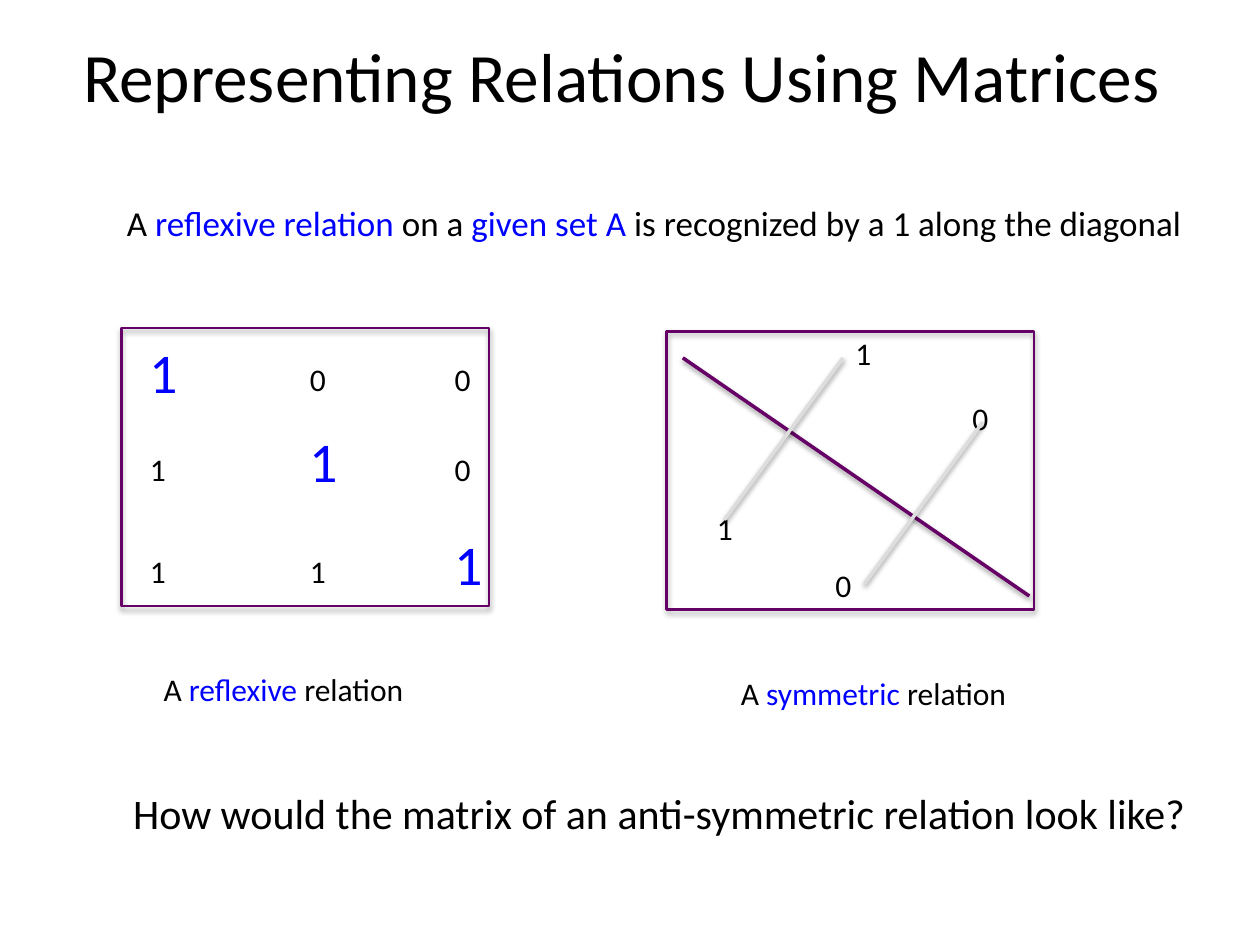
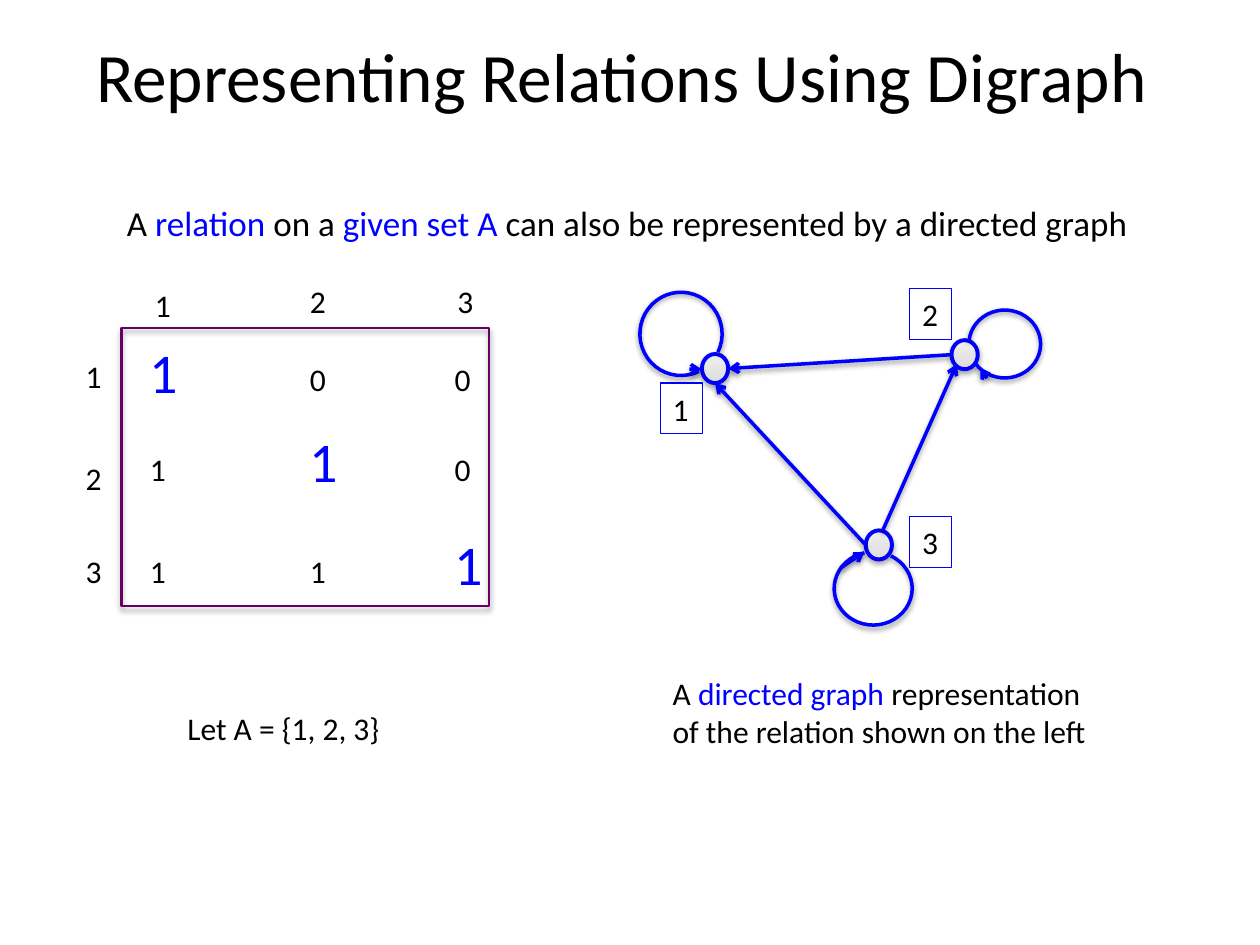
import math
from dataclasses import dataclass

from lxml import etree
from pptx import Presentation
from pptx import util as u
from pptx.dml.color import RGBColor
from pptx.enum import shapes, text
from pptx.oxml import ns

Pt = u.Pt


@dataclass(frozen=True)
class Theme:
    font: str = "Calibri"
    ink: str = "000000"
    accent: str = "0000FF"
    frame: str = "660066"
    mirror: str = "DDDDDD"
    node_light: str = "EFEFEF"
    title: float = 39.6
    question: float = 24
    lead: float = 20
    body: float = 18
    diagonal: float = 32


@dataclass(frozen=True)
class Node:
    """A graph node: its centre and the offset from there to its label box."""
    x: float
    y: float
    label_dx: float
    label_dy: float

    def site(self, direction):
        """Point on the rim, with direction in units of the half axes."""
        dx, dy = direction
        return self.x + dx * NODE_W / 2, self.y + dy * NODE_H / 2


@dataclass(frozen=True)
class Loop:
    """An elliptic arc, drawn clockwise, with a short arrow into its node."""
    center: tuple
    radii: tuple
    first_angle: float
    last_angle: float
    arrow: tuple

    def points(self, steps=40):
        (cx, cy), (rx, ry) = self.center, self.radii
        sweep = self.last_angle - self.first_angle
        angles = [math.radians(self.first_angle + sweep * i / steps) for i in range(steps + 1)]
        return [(cx + rx * math.cos(a), cy + ry * math.sin(a)) for a in angles]


THEME = Theme()
DIGIT_W, DIGIT_H = 24, 29
FRAME_W, FRAME_H = 210, 159
NODE_W, NODE_H = 15, 16.6

# The relation as a matrix: a 1 in row i and column j means that i is related to j.
MATRIX = ("100", "110", "111")
COLUMNS = (78.5, 170, 252.7)
ROWS = (202.3, 253.4, 311.8)
DIAGONAL_LIFT = 13

# The same relation as a digraph.
LEFT, RIGHT, BOTTOM = (-1, 0), (1, 0), (0, 1)
BOTTOM_LEFT, TOP_RIGHT = (-0.6, 0.65), (0.3, -1)
NODES = {
    1: Node(408.6, 210.6, -31.3, 8.3),
    2: Node(551.2, 202.7, -31.3, -37.8),
    3: Node(502.2, 311.4, 17.6, -16.2),
}
EDGE_SITES = {(2, 1): (LEFT, RIGHT), (3, 1): (LEFT, BOTTOM), (3, 2): (TOP_RIGHT, BOTTOM_LEFT)}
LOOPS = {
    1: Loop((389.2, 190.8), (23.5, 23.8), 64, 386, ((399, 211), (401, 211))),
    2: Loop((574.2, 196.6), (20.5, 19.4), 186, 504, ((561.6, 212.4), (560.2, 210.2))),
    3: Loop((499, 336.3), (22.3, 20.9), -63, 257, ((480.2, 324.7), (494, 315.4))),
}


def rgb(color):
    return RGBColor.from_string(color)


def write(tf, lines, size=THEME.body, align=text.PP_ALIGN.LEFT, wrap=False):
    """Fill a frame line by line; *starred* pieces take the accent colour."""
    tf.word_wrap = wrap
    for i, line in enumerate(lines.split("\n")):
        p = tf.paragraphs[0] if i == 0 else tf.add_paragraph()
        p.alignment = align
        for j, piece in enumerate(line.split("*")):
            if piece:
                r = p.add_run()
                r.text = piece
                r.font.name = THEME.font
                r.font.size = Pt(size)
                r.font.color.rgb = rgb(THEME.accent if j % 2 else THEME.ink)


def add_shadow(sp, alpha=35, dist=1.8):
    props = sp._element.spPr
    for old in props.findall(ns.qn("a:effectLst")):
        props.remove(old)
    effects = etree.SubElement(props, ns.qn("a:effectLst"))
    outer = etree.SubElement(effects, ns.qn("a:outerShdw"), blurRad=str(Pt(3.1)),
                             dist=str(Pt(dist)), dir="5400000", rotWithShape="0")
    black = etree.SubElement(outer, ns.qn("a:srgbClr"), val=THEME.ink)
    etree.SubElement(black, ns.qn("a:alpha"), val=str(alpha * 1000))


class Deck:
    def __init__(self, theme):
        self.theme = theme
        self.prs = Presentation()
        self.prs.slide_width, self.prs.slide_height = Pt(720), Pt(540)
        self.s = None

    def slide(self, title, lead, lead_w):
        self.s = self.prs.slides.add_slide(self.prs.slide_layouts[6])
        tf = self.text(36, 18.7, 648, 93, title, size=self.theme.title,
                       align=text.PP_ALIGN.CENTER, wrap=True)
        tf.margin_top, tf.margin_right = 0, Pt(16.4)
        self.text(65.5, 111.6, lead_w, 31.5, lead, size=self.theme.lead)

    def text(self, x, y, w, h, lines, **fmt):
        tf = self.s.shapes.add_textbox(Pt(x), Pt(y), Pt(w), Pt(h)).text_frame
        write(tf, lines, **fmt)
        return tf

    def digit(self, x, y, value):
        self.text(x, y, DIGIT_W, DIGIT_H, str(value))

    def outline(self, sp, color, width):
        sp.shadow.inherit = False
        sp.fill.background()
        sp.line.color.rgb = rgb(color)
        sp.line.width = Pt(width)
        return sp

    def shape(self, kind, x, y, w, h, color, width):
        sp = self.s.shapes.add_shape(kind, Pt(x), Pt(y), Pt(w), Pt(h))
        return self.outline(sp, color, width)

    def frame(self, x, y):
        add_shadow(self.shape(shapes.MSO_SHAPE.RECTANGLE, x, y, FRAME_W, FRAME_H,
                              self.theme.frame, 1.5))

    def matrix(self):
        self.frame(69.4, 187.4)
        for i, (y, values) in enumerate(zip(ROWS, MATRIX)):
            for j, (x, value) in enumerate(zip(COLUMNS, values)):
                if i == j:
                    self.text(x, y - DIAGONAL_LIFT, 31, 46, f"*{value}*",
                              size=self.theme.diagonal)
                else:
                    self.digit(x, y, value)

    def node(self, node):
        sp = self.shape(shapes.MSO_SHAPE.OVAL, node.x - NODE_W / 2, node.y - NODE_H / 2,
                        NODE_W, NODE_H, self.theme.accent, 2.25)
        sp.fill.gradient()
        sp.fill.gradient_angle = 90
        for stop, color in zip(sp.fill.gradient_stops,
                               (self.theme.mirror, self.theme.node_light)):
            stop.color.rgb = rgb(color)
        add_shadow(sp)

    def node_label(self, node, value):
        sp = self.shape(shapes.MSO_SHAPE.RECTANGLE, node.x + node.label_dx,
                        node.y + node.label_dy, DIGIT_W, DIGIT_H, self.theme.accent, 0.75)
        write(sp.text_frame, str(value))

    def line(self, start, end, color, arrow=False):
        sp = self.s.shapes.add_connector(shapes.MSO_CONNECTOR.STRAIGHT,
                                         *(Pt(v) for v in (*start, *end)))
        sp.line.color.rgb = rgb(color)
        sp.line.width = Pt(2)
        if arrow:
            etree.SubElement(sp.line._get_or_add_ln(), ns.qn("a:tailEnd"), type="arrow")
        add_shadow(sp, alpha=38, dist=1.6)

    def arrow(self, start, end):
        self.line(start, end, self.theme.accent, arrow=True)

    def loop(self, loop):
        start, *rest = [(Pt(x), Pt(y)) for x, y in loop.points()]
        builder = self.s.shapes.build_freeform(*start)
        builder.add_line_segments(rest, close=False)
        sp = self.outline(builder.convert_to_shape(), self.theme.accent, 2)
        add_shadow(sp, alpha=38, dist=1.6)
        self.arrow(*loop.arrow)

    def digraph(self):
        """Draw every node, then a loop or an edge for every 1 in the matrix."""
        for value, node in NODES.items():
            self.node(node)
            self.node_label(node, value)
        for i, values in enumerate(MATRIX, start=1):
            for j, value in enumerate(values, start=1):
                if value == "0":
                    continue
                if i == j:
                    self.loop(LOOPS[i])
                else:
                    leave, enter = EDGE_SITES[i, j]
                    self.arrow(NODES[i].site(leave), NODES[j].site(enter))


def matrices_slide(deck):
    deck.slide("Representing Relations Using Matrices",
               "A *reflexive relation *on a *given set A *is recognized by a 1 along the diagonal",
               617)
    deck.matrix()
    deck.text(86.4, 379.4, 152.5, DIGIT_H, "A *reflexive* relation")

    deck.frame(381, 189.4)
    deck.line((390.2, 204.5), (588.2, 340.6), THEME.frame)
    mirrored_pairs = (
        ("1", (481.7, 204.5), (481.7, 187.2), (402.5, 287.3)),
        ("0", (561.6, 241.2), (548.6, 224.6), (470.2, 319.7)),
    )
    for value, (x, y), upper, lower in mirrored_pairs:
        deck.digit(*upper, value)
        deck.digit(*lower, value)
        deck.line((x, y), (x - 67.7, y + 92.5), THEME.mirror)
    deck.text(416.2, 381.6, 168, DIGIT_H, "A *symmetric* relation")

    deck.text(69, 446.4, 622, 36,
              "How would the matrix of an anti-symmetric relation look like?",
              size=THEME.question)


def digraph_slide(deck):
    deck.slide("Representing Relations Using Digraph",
               "A *relation *on a *given set A *can also be represented by a directed graph",
               590.5)
    deck.matrix()
    column_heads = ((81.4, 159.8), (170, 157.7), (254.2, 157.7))
    row_heads = ((41.8, 200.2), (41.8, 258.5), (41.8, 311.8))
    for heads in (column_heads, row_heads):
        for value, (x, y) in enumerate(heads, start=1):
            deck.digit(x, y, value)
    deck.text(100, 401.8, 125.3, DIGIT_H, "Let A = {1, 2, 3}")

    deck.digraph()
    deck.text(377.3, 381.6, 255.5, 51,
              "A *directed graph *representation\nof the relation shown on the left")


def main():
    deck = Deck(THEME)
    matrices_slide(deck)
    digraph_slide(deck)
    deck.prs.save("out.pptx")


if __name__ == "__main__":
    main()
